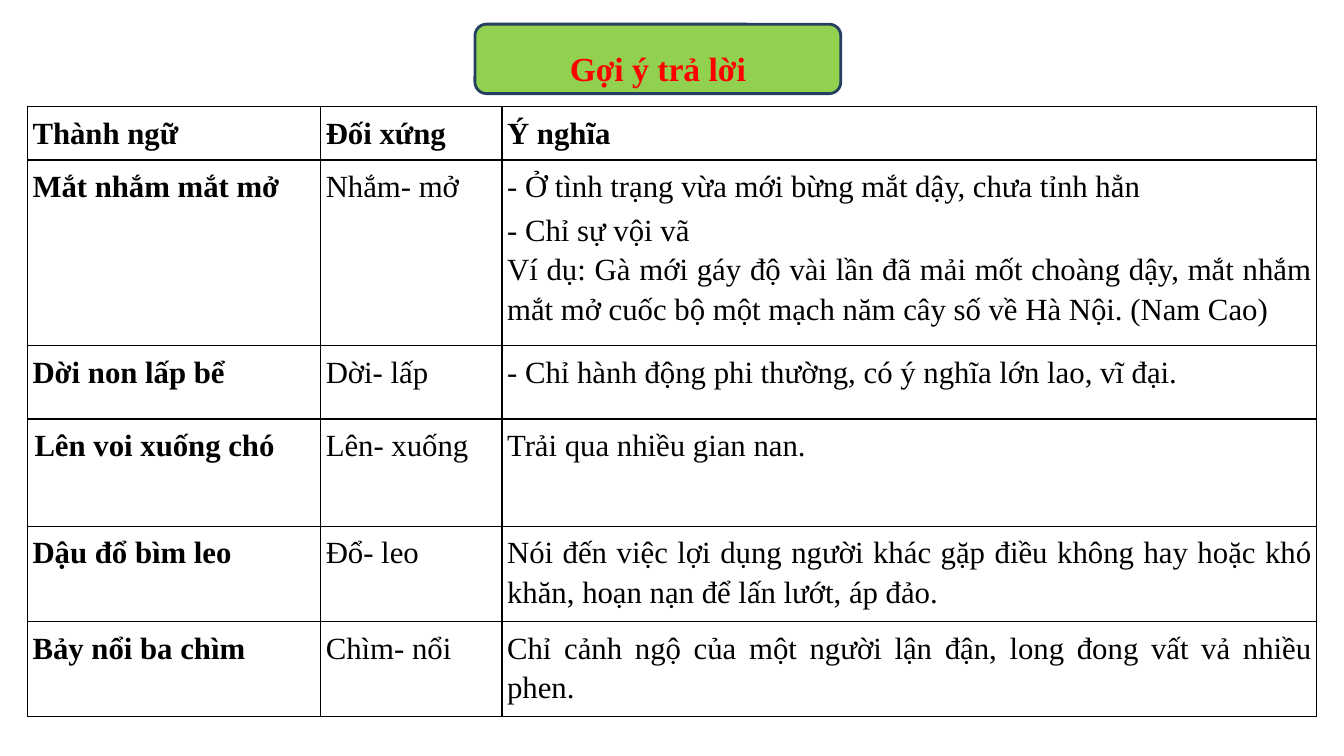
from dataclasses import dataclass

from lxml import etree
from pptx import Presentation
from pptx import util as u
from pptx.dml.color import RGBColor
from pptx.enum import shapes, text
from pptx.oxml.ns import qn


@dataclass(frozen=True)
class Theme:
    font: str = "Times New Roman"
    ink: str = "000000"
    heading: str = "FF0000"
    badge: str = "92D050"
    badge_edge: str = "243F60"
    heading_size: int = 24
    body_size: int = 22
    badge_width: int = 2
    border_width: int = 1
    line_spacing: float = 1.15


THEME = Theme()
COLUMN_WIDTHS = (7.39, 4.57, 20.53)
ROW_HEIGHTS = (1.34, 4.68, 1.85, 2.7, 2.4, 2.4)
CELL_MARGIN = 0.13
IDIOMS = (
    ("Thành ngữ", "Đối xứng", ("Ý nghĩa",)),
    ("Mắt nhắm mắt mở", "Nhắm- mở", (
        "- Ở tình trạng vừa mới bừng mắt dậy, chưa tỉnh hẳn",
        "- Chỉ sự vội vã",
        "Ví dụ: Gà mới gáy độ vài lần đã mải mốt choàng dậy, mắt nhắm mắt mở "
        "cuốc bộ một mạch năm cây số về Hà Nội. (Nam Cao)",
    )),
    ("Dời non lấp bể", "Dời- lấp",
     ("- Chỉ hành động phi thường, có ý nghĩa lớn lao, vĩ đại.",)),
    ("Lên voi xuống chó", "Lên- xuống", ("Trải qua nhiều gian nan.",)),
    ("Dậu đổ bìm leo", "Đổ- leo",
     ("Nói đến việc lợi dụng người khác gặp điều không hay hoặc khó khăn, "
      "hoạn nạn để lấn lướt, áp đảo.",)),
    ("Bảy nổi ba chìm", "Chìm- nổi",
     ("Chỉ cảnh ngộ của một người lận đận, long đong vất vả nhiều phen.",)),
)


def apply(target, values):
    for name, value in values.items():
        setattr(target, name, value)


def write(frame, lines, alignment, size, color, bold):
    for index, line in enumerate(lines):
        paragraph = frame.add_paragraph() if index else frame.paragraphs[0]
        apply(paragraph, {
            "alignment": alignment,
            "line_spacing": THEME.line_spacing,
            "space_before": u.Pt(0),
            "space_after": u.Pt(0),
        })
        run = paragraph.add_run()
        run.text = line
        apply(run.font, {"name": THEME.font, "size": u.Pt(size), "bold": bold})
        run.font.color.rgb = RGBColor.from_string(color)


def draw_border(cell):
    properties = cell._tc.get_or_add_tcPr()
    for position, side in enumerate(("lnL", "lnR", "lnT", "lnB")):
        edge = etree.Element(qn(f"a:{side}"), w=str(u.Pt(THEME.border_width)))
        fill = etree.SubElement(edge, qn("a:solidFill"))
        etree.SubElement(fill, qn("a:srgbClr"), val=THEME.ink)
        properties.insert(position, edge)


def add_heading(slide, left, top, width, height):
    badge = slide.shapes.add_shape(
        shapes.MSO_SHAPE.ROUNDED_RECTANGLE,
        u.Cm(left + (width - 9.22) / 2), u.Cm(top), u.Cm(9.22), u.Cm(height))
    badge.shadow.inherit = False
    badge.fill.solid()
    badge.fill.fore_color.rgb = RGBColor.from_string(THEME.badge)
    badge.line.color.rgb = RGBColor.from_string(THEME.badge_edge)
    badge.line.width = u.Pt(THEME.badge_width)

    heading = slide.shapes.title
    heading.element.addprevious(badge.element)
    apply(heading, {
        "left": u.Cm(left), "top": u.Cm(top + 0.33),
        "width": u.Cm(width), "height": u.Cm(1.35),
    })
    apply(heading.text_frame, {
        "word_wrap": True,
        "auto_size": text.MSO_AUTO_SIZE.SHAPE_TO_FIT_TEXT,
        "vertical_anchor": text.MSO_ANCHOR.TOP,
    })
    write(heading.text_frame, ("Gợi ý trả lời",), text.PP_ALIGN.CENTER,
          THEME.heading_size, THEME.heading, True)


def add_idiom_table(slide, left, top):
    table = slide.shapes.add_table(
        len(IDIOMS), len(COLUMN_WIDTHS), u.Cm(left), u.Cm(top),
        u.Cm(sum(COLUMN_WIDTHS)), u.Cm(sum(ROW_HEIGHTS))).table
    apply(table, {"first_row": False, "horz_banding": False})
    for column, width in zip(table.columns, COLUMN_WIDTHS):
        column.width = u.Cm(width)
    for row, height, (idiom, pair, meaning) in zip(table.rows, ROW_HEIGHTS, IDIOMS):
        row.height = u.Cm(height)
        for index, (cell, lines) in enumerate(zip(row.cells, ((idiom,), (pair,), meaning))):
            for side in ("left", "right", "top", "bottom"):
                setattr(cell, f"margin_{side}", u.Cm(CELL_MARGIN))
            cell.vertical_anchor = text.MSO_ANCHOR.TOP
            cell.fill.background()
            draw_border(cell)
            write(cell.text_frame, lines, text.PP_ALIGN.JUSTIFY, THEME.body_size,
                  THEME.ink, index == 0 or idiom == IDIOMS[0][0])
    table.cell(1, 2).text_frame.paragraphs[0].space_after = u.Pt(3.6)
    table.cell(3, 0).margin_left = u.Cm(CELL_MARGIN + 0.05)


def main():
    deck = Presentation()
    apply(deck, {"slide_width": u.Cm(33.87), "slide_height": u.Cm(19.05)})
    slide = deck.slides.add_slide(deck.slide_layouts[5])
    add_heading(slide, 8.08, 0.61, 17, 1.75)
    add_idiom_table(slide, 0.69, 2.69)
    deck.save("out.pptx")


if __name__ == "__main__":
    main()
